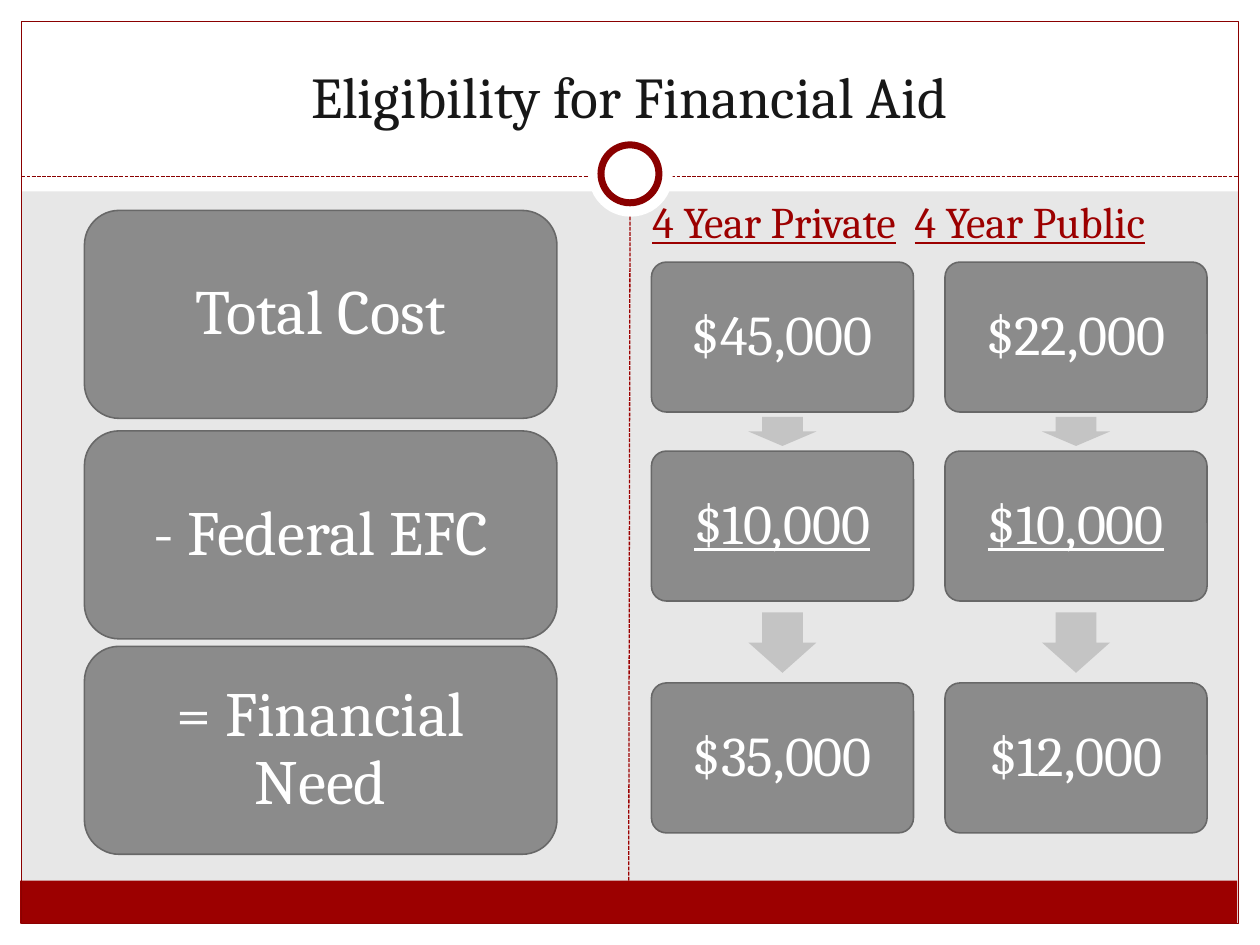
from dataclasses import dataclass

from lxml import etree
from pptx import Presentation
from pptx.dml.color import RGBColor
from pptx.enum import dml, shapes, text
from pptx.oxml import ns
from pptx.util import Inches, Pt

WHITE = RGBColor(0xFF, 0xFF, 0xFF)
PAPER = RGBColor(0xE7, 0xE7, 0xE7)
RED = RGBColor(0x9C, 0x00, 0x00)
DARK_RED = RGBColor(0x8A, 0x00, 0x00)
INK = RGBColor(0x17, 0x17, 0x17)
GREY = RGBColor(0x8B, 0x8B, 0x8B)
EDGE = RGBColor(0x68, 0x68, 0x68)
PALE = RGBColor(0xC4, 0xC4, 0xC4)
FONT = "Cambria"
KIND = shapes.MSO_SHAPE


@dataclass
class Area:
    left: float
    top: float
    width: float
    height: float

    def lengths(self) -> tuple:
        return tuple(Inches(n) for n in
                     (self.left, self.top, self.width, self.height))


@dataclass
class Column:
    left: float
    sums: tuple[str, str, str]


def add_part(slide, kind, area: Area, fill=None, line=None, weight=0.75):
    part = slide.shapes.add_shape(kind, *area.lengths())
    part.shadow.inherit = False
    if fill is None:
        part.fill.background()
    else:
        part.fill.solid()
        part.fill.fore_color.rgb = fill
    if line is None:
        part.line.fill.background()
    else:
        part.line.color.rgb = line
        part.line.width = Pt(weight)
    return part


def add_dash(slide, start: tuple, end: tuple, color: RGBColor) -> None:
    ends = [Inches(n) for n in (*start, *end)]
    dash = slide.shapes.add_connector(shapes.MSO_CONNECTOR.STRAIGHT, *ends)
    dash.line.color.rgb = color
    dash.line.width = Pt(0.75)
    dash.line.dash_style = dml.MSO_LINE.SQUARE_DOT
    etree.SubElement(dash._element.spPr, ns.qn("a:effectLst"))


def style_run(run, size: float, color: RGBColor, under=False) -> None:
    run.font.name = FONT
    run.font.size = Pt(size)
    run.font.color.rgb = color
    run.font.underline = under


def add_box(slide, area: Area, label: str, size: float, pad: tuple,
            under=False):
    box = add_part(slide, KIND.ROUNDED_RECTANGLE, area, GREY, EDGE, 0.9)
    frame = box.text_frame
    frame.text = label
    frame.word_wrap = True
    frame.vertical_anchor = text.MSO_ANCHOR.MIDDLE
    frame.margin_left = frame.margin_right = Inches(pad[0])
    frame.margin_top = frame.margin_bottom = Inches(pad[1])
    para = frame.paragraphs[0]
    para.alignment = text.PP_ALIGN.CENTER
    para.line_spacing = 0.9
    style_run(para.runs[0], size, WHITE, under)
    return box


def add_column(slide, column: Column) -> None:
    width, height = 2.08, 1.19
    for row, (top, label) in enumerate(zip((2.08, 3.58, 5.42), column.sums)):
        box = add_box(slide, Area(column.left, top, width, height), label,
                      32, (0.13, 0.13), under=row == 1)
        box.adjustments[0] = 0.1
    # Arrows sit on the middle of the column
    left = column.left + (width - 0.54) / 2
    for top, tall in ((3.31, 0.23), (4.86, 0.48)):
        arrow = add_part(slide, KIND.DOWN_ARROW,
                         Area(left, top, 0.54, tall), PALE)
        arrow.adjustments[0] = 0.6
        arrow.adjustments[1] = 0.5


def add_frame(slide) -> None:
    slide.background.fill.solid()
    slide.background.fill.fore_color.rgb = PAPER
    for area in (Area(0, 7.33, 10, 0.17), Area(0, 0, 10, 1.52),
                 Area(0, 0, 0.17, 7.5), Area(9.83, 0, 0.17, 7.5)):
        add_part(slide, KIND.RECTANGLE, area, WHITE)
    add_part(slide, KIND.RECTANGLE, Area(0.16, 6.99, 9.66, 0.34), RED)
    add_part(slide, KIND.RECTANGLE, Area(0.17, 0.17, 9.66, 7.16),
             line=DARK_RED)
    add_dash(slide, (0.17, 1.4), (9.83, 1.4), DARK_RED)
    add_part(slide, KIND.OVAL, Area(4.67, 1.05, 0.67, 0.67), WHITE)
    add_part(slide, KIND.OVAL, Area(4.77, 1.15, 0.46, 0.46), WHITE,
             DARK_RED, 4)
    add_dash(slide, (4.99, 6.99), (5, 1.72), RED)


def set_title(slide, label: str) -> None:
    title = slide.shapes.title
    # Bring the title in front of the white band
    title._element.getparent().append(title._element)
    area = Area(0.33, 0.25, 9.33, 0.83)
    title.left, title.top, title.width, title.height = area.lengths()
    frame = title.text_frame
    frame.text = label
    frame.auto_size = text.MSO_AUTO_SIZE.NONE
    frame.vertical_anchor = text.MSO_ANCHOR.BOTTOM
    frame.paragraphs[0].alignment = text.PP_ALIGN.CENTER
    style_run(frame.paragraphs[0].runs[0], 33, INK)


def add_heads(slide, first: str, second: str) -> None:
    area = Area(5.08, 1.5, 4.75, 0.55)
    frame = slide.shapes.add_textbox(*area.lengths()).text_frame
    frame.word_wrap = True
    para = frame.paragraphs[0]
    para.space_before = Pt(5)
    for label in (first, "\t", second):
        run = para.add_run()
        run.text = label
        style_run(run, 25, RED, under=label != "\t")
    # The tab stop starts the second heading
    stops = etree.SubElement(para._p.get_or_add_pPr(), ns.qn("a:tabLst"))
    etree.SubElement(stops, ns.qn("a:tab"), pos=str(Inches(2.08)), algn="l")


def main() -> None:
    deck = Presentation()
    deck.slide_width, deck.slide_height = Inches(10), Inches(7.5)
    slide = deck.slides.add_slide(deck.slide_layouts[5])
    add_frame(slide)
    set_title(slide, "Eligibility for Financial Aid")

    # Formula on the left
    for top, label in ((1.67, "Total Cost"), (3.42, "- Federal EFC"),
                       (5.13, "= Financial Need")):
        add_box(slide, Area(0.67, top, 3.75, 1.65), label, 36, (0.15, 0.07))

    # Examples on the right
    add_heads(slide, "4 Year Private", "4 Year Public")
    for column in (Column(5.17, ("$45,000", "$10,000", "$35,000")),
                   Column(7.5, ("$22,000", "$10,000", "$12,000"))):
        add_column(slide, column)
    deck.save("out.pptx")


if __name__ == "__main__":
    main()
